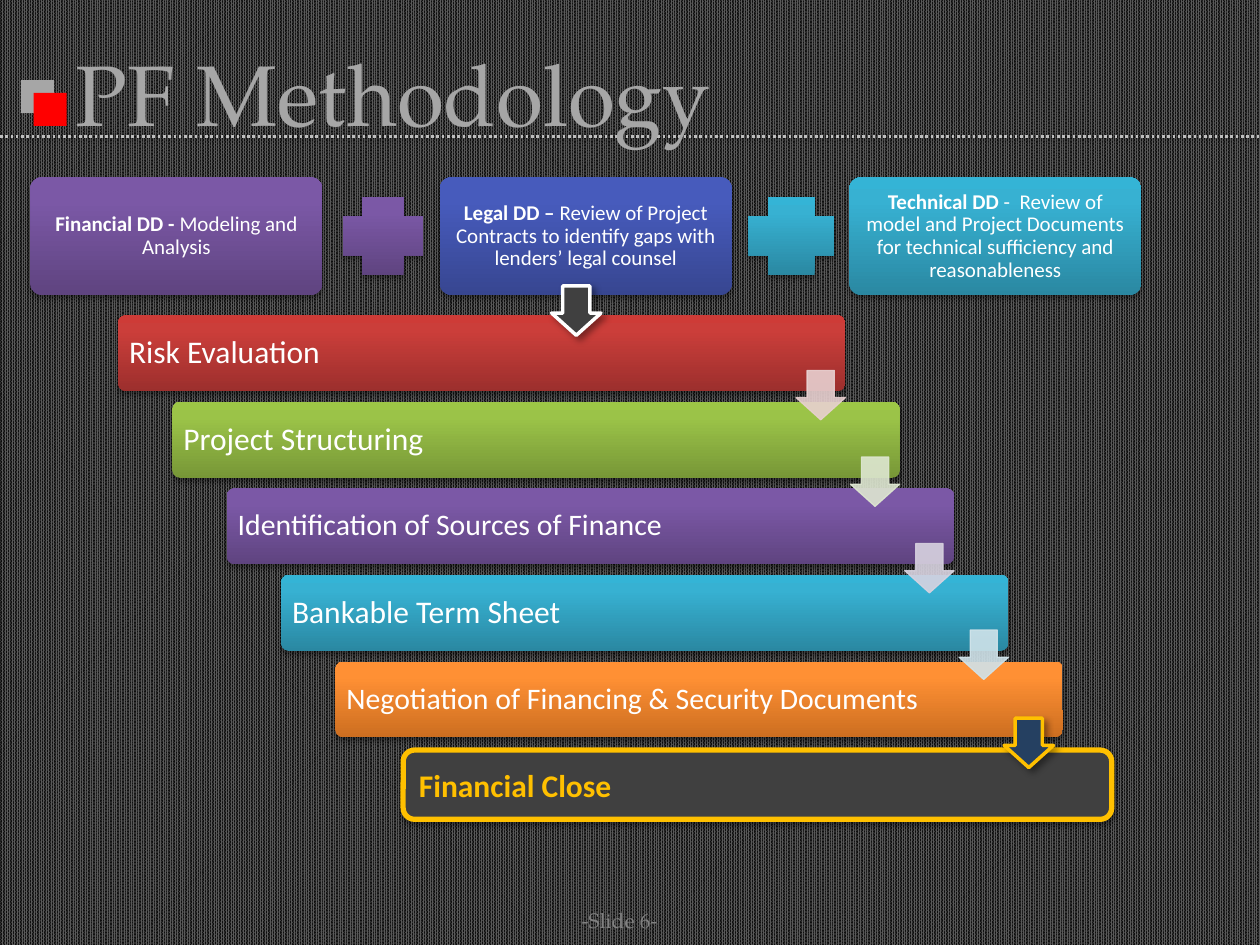
from dataclasses import dataclass

from lxml import etree
from pptx import Presentation
from pptx.dml.color import RGBColor
from pptx.enum.dml import MSO_LINE, MSO_PATTERN
from pptx.enum.shapes import MSO_CONNECTOR, MSO_SHAPE
from pptx.enum.text import MSO_ANCHOR, PP_ALIGN
from pptx.oxml import parse_xml
from pptx.oxml.ns import nsdecls, qn
from pptx.util import Pt


@dataclass(frozen=True)
class Theme:
    body_font: str = "Calibri"
    title_font: str = "TeX Gyre Pagella"
    title_size: int = 49
    step_size: int = 18
    long_step_size: int = 17
    small_size: int = 12
    white: str = "FFFFFF"
    grey: str = "A6A6A6"
    footer_grey: str = "808080"
    rule_grey: str = "BFBFBF"
    charcoal: str = "404040"
    navy: str = "254061"
    gold: str = "FFC000"
    accent: str = "FF0000"
    pattern_front: str = "595959"
    pattern_back: str = "0D0D0D"
    # Gradients run from the bottom edge to the top edge
    red: tuple = ("9C2F2D", "CB3E3A", "CE3B37")
    green: tuple = ("779737", "9BC348", "9DC746")
    purple: tuple = ("5F4480", "7B58A6", "7C57A8")
    cyan: tuple = ("2A88A2", "37B1D2", "34B4D6")
    orange: tuple = ("CC6E20", "FF9034", "FF9136")
    blue: tuple = ("374691", "475BBC", "455ABF")
    # Shadows: opacity %, blur, distance, angle
    soft_shadow: tuple = (35, 3.1, 1.8, 90)
    close_shadow: tuple = (38, 3.1, 1.6, 90)
    arrow_shadow: tuple = (40, 4, 3, 45)
    rule_shadow: tuple = (55, 2.5, 0, 45)


THEME = Theme()

TITLE = "PF Methodology"
FOOTER = "-Slide 6-"
CARDS = [  # left, gradient, bold lead, text
    (17.3, THEME.purple, "Financial DD - ", "Modeling and Analysis"),
    (251.3, THEME.blue, "Legal DD – ",
     "Review of Project Contracts to identify gaps with lenders’ legal counsel"),
    (485.3, THEME.cyan, "Technical DD ",
     "-  Review of model and Project Documents for technical sufficiency and reasonableness"),
]
PLUSES = [(195.8, 46.1, THEME.purple), (427.7, 49, THEME.cyan)]  # left, width, gradient
STEPS = [  # text, size, gradient, colour of the arrow to the next step
    ("Risk Evaluation", THEME.step_size, THEME.red, "E8D0D0"),
    ("Project Structuring", THEME.step_size, THEME.green, "DEE7D1"),
    ("Identification of Sources of Finance", THEME.long_step_size, THEME.purple, "D8D3E0"),
    ("Bankable Term Sheet", THEME.step_size, THEME.cyan, "D0E3EA"),
    ("Negotiation of Financing & Security Documents", THEME.long_step_size, THEME.orange, None),
]
CLOSE = "Financial Close"

SLIDE_WIDTH, SLIDE_HEIGHT = 720, 540
CARD_TOP, CARD_WIDTH, CARD_HEIGHT = 101.4, 167, 67.3
PLUS_TOP, PLUS_HEIGHT = 112.5, 44.8
STEP_LEFT, STEP_TOP, STEP_WIDTH, STEP_HEIGHT = 67.5, 180.2, 415.6, 43.4
STEP_SHIFT, STEP_PITCH = 31.05, 49.45
ARROW_SIZE, ARROW_DROP = 28.2, 31.5
MARKER_SIZE = 18.9


def set_opacity(fill_parent, percent):
    color = fill_parent.find(f"{qn('a:solidFill')}/{qn('a:srgbClr')}")
    etree.SubElement(color, qn("a:alpha"), val=str(percent * 1000))


def set_gradient(shape, colors):
    shape.fill.gradient()
    shape.fill.gradient_angle = 90
    stops = shape._element.spPr.find(f"{qn('a:gradFill')}/{qn('a:gsLst')}")
    for stop in list(stops):
        stops.remove(stop)
    for position, color in zip((0, 80, 100), colors):
        stop = etree.SubElement(stops, qn("a:gs"), pos=str(position * 1000))
        etree.SubElement(stop, qn("a:srgbClr"), val=color)


def add_shadow(properties, shadow):
    """Put an effect list on shape properties, empty when shadow is None."""
    for effects in properties.findall(qn("a:effectLst")):
        properties.remove(effects)
    outer = ""
    if shadow:
        opacity, blur, distance, angle = shadow
        outer = (f'<a:outerShdw blurRad="{Pt(blur)}" dist="{Pt(distance)}" '
                 f'dir="{angle * 60000}" rotWithShape="0"><a:srgbClr val="000000">'
                 f'<a:alpha val="{opacity * 1000}"/></a:srgbClr></a:outerShdw>')
    properties.append(parse_xml(f'<a:effectLst {nsdecls("a")}>{outer}</a:effectLst>'))


def add_shape(slide, kind, box, fill, line=None, shadow=None, adjustments=(), opacity=100):
    """Add a preset shape; fill is a colour or gradient, line a (colour, width) pair."""
    shape = slide.shapes.add_shape(kind, *map(Pt, box))
    for index, value in enumerate(adjustments):
        shape.adjustments[index] = value
    if isinstance(fill, tuple):
        set_gradient(shape, fill)
    else:
        shape.fill.solid()
        shape.fill.fore_color.rgb = RGBColor.from_string(fill)
    if line:
        color, width = line
        shape.line.color.rgb = RGBColor.from_string(color)
        shape.line.width = Pt(width)
    else:
        shape.line.fill.background()
    if opacity < 100:
        properties = shape._element.spPr
        set_opacity(properties, opacity)
        set_opacity(properties.find(qn("a:ln")), opacity)
    shape.shadow.inherit = False
    add_shadow(shape._element.spPr, shadow)
    return shape


def write_text(shape, runs, size, color, font=THEME.body_font, align=PP_ALIGN.LEFT,
               inset=None, line_spacing=None):
    """Fill a shape with one paragraph of (text, bold) runs."""
    frame = shape.text_frame
    frame.word_wrap = True
    frame.vertical_anchor = MSO_ANCHOR.MIDDLE
    if inset is not None:
        frame.margin_left = frame.margin_right = Pt(inset)
        frame.margin_top = frame.margin_bottom = Pt(inset)
    paragraph = frame.paragraphs[0]
    paragraph.alignment = align
    paragraph.line_spacing = line_spacing
    for text, bold in runs:
        run = paragraph.add_run()
        run.text = text
        run.font.name = font
        run.font.size = Pt(size)
        run.font.bold = bold
        run.font.color.rgb = RGBColor.from_string(color)


def add_arrow(slide, left, top, fill, line, shadow=None, opacity=100):
    add_shape(slide, MSO_SHAPE.DOWN_ARROW, (left, top, ARROW_SIZE, ARROW_SIZE), fill,
              line, shadow, (0.55, 0.45), opacity)


def add_backdrop(slide):
    fill = slide.background.fill
    fill.patterned()
    fill.pattern = MSO_PATTERN.PERCENT_90
    fill.fore_color.rgb = RGBColor.from_string(THEME.pattern_front)
    fill.back_color.rgb = RGBColor.from_string(THEME.pattern_back)
    for left, top, color in ((12, 45.8, THEME.grey), (19.2, 53, THEME.accent)):
        add_shape(slide, MSO_SHAPE.RECTANGLE, (left, top, MARKER_SIZE, MARKER_SIZE), color)
    rule = slide.shapes.add_connector(MSO_CONNECTOR.STRAIGHT, 0, Pt(78), Pt(SLIDE_WIDTH), Pt(78))
    rule.line.color.rgb = RGBColor.from_string(THEME.rule_grey)
    rule.line.width = Pt(1.5)
    rule.line.dash_style = MSO_LINE.ROUND_DOT
    add_shadow(rule._element.spPr, THEME.rule_shadow)


def add_steps(slide):
    arrows = []
    for index, (text, size, gradient, arrow_color) in enumerate(STEPS):
        left, top = STEP_LEFT + index * STEP_SHIFT, STEP_TOP + index * STEP_PITCH
        bar = add_shape(slide, MSO_SHAPE.ROUNDED_RECTANGLE, (left, top, STEP_WIDTH, STEP_HEIGHT),
                        gradient, shadow=THEME.soft_shadow, adjustments=(0.1,))
        write_text(bar, [(text, False)], size, THEME.white, inset=5, line_spacing=0.9)
        if arrow_color:
            arrows.append((left + STEP_WIDTH - ARROW_SIZE, top + ARROW_DROP, arrow_color))
    for left, top, color in arrows:
        add_arrow(slide, left, top, color, (color, 0.75), opacity=90)


def add_diligence_row(slide):
    for left, gradient, lead, text in CARDS:
        card = add_shape(slide, MSO_SHAPE.ROUNDED_RECTANGLE,
                         (left, CARD_TOP, CARD_WIDTH, CARD_HEIGHT), gradient,
                         shadow=THEME.soft_shadow, adjustments=(0.1,))
        write_text(card, [(lead, True), (text, False)], THEME.small_size, THEME.white,
                   align=PP_ALIGN.CENTER, inset=3.6, line_spacing=0.9)
    for left, width, gradient in PLUSES:
        add_shape(slide, MSO_SHAPE.CROSS, (left, PLUS_TOP, width, PLUS_HEIGHT), gradient,
                  shadow=THEME.soft_shadow)


def main():
    presentation = Presentation()
    presentation.slide_width, presentation.slide_height = Pt(SLIDE_WIDTH), Pt(SLIDE_HEIGHT)
    slide = presentation.slides.add_slide(presentation.slide_layouts[6])
    add_backdrop(slide)
    add_steps(slide)
    add_diligence_row(slide)
    close = add_shape(slide, MSO_SHAPE.ROUNDED_RECTANGLE, (230.4, 428.6, 404.9, 39.6),
                      THEME.charcoal, (THEME.gold, 3), THEME.close_shadow)
    write_text(close, [(CLOSE, True)], THEME.step_size, THEME.gold)
    add_arrow(slide, 573.8, 410.4, THEME.navy, (THEME.gold, 2), THEME.arrow_shadow)
    add_arrow(slide, 315.2, 163.4, THEME.charcoal, (THEME.white, 2), THEME.arrow_shadow)
    title = slide.shapes.add_textbox(Pt(36), Pt(21.6), Pt(648), Pt(62.6))
    write_text(title, [(TITLE, False)], THEME.title_size, THEME.grey, THEME.title_font)
    footer = slide.shapes.add_textbox(Pt(270), Pt(511.2), Pt(168), Pt(28.8))
    write_text(footer, [(FOOTER, False)], THEME.small_size, THEME.footer_grey,
               THEME.title_font, PP_ALIGN.CENTER)
    presentation.save("out.pptx")


if __name__ == "__main__":
    main()
